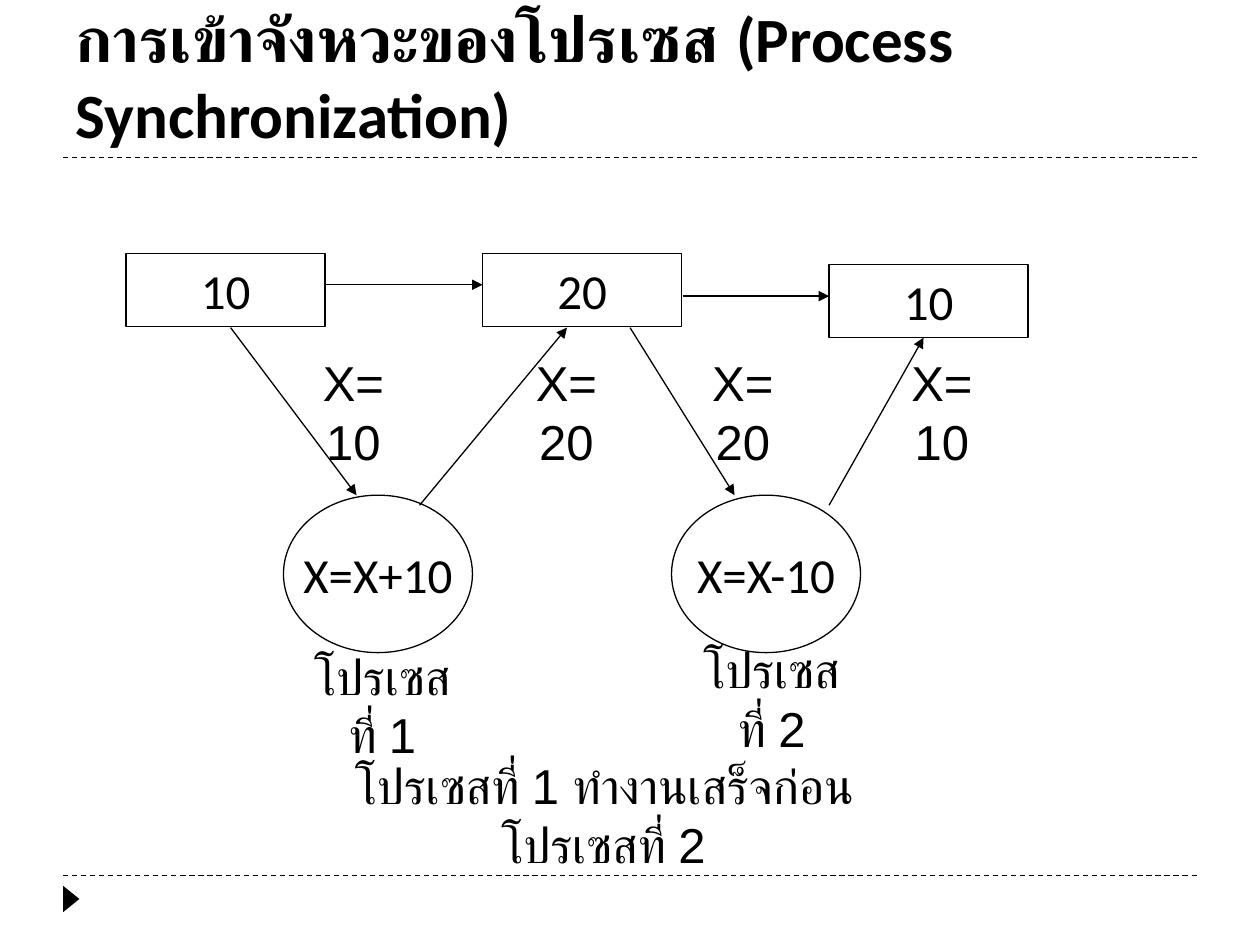
"""Build a slide on process synchronization: values in boxes, processes in circles."""
from dataclasses import dataclass

from lxml import etree
from pptx import Presentation
from pptx import util as u
from pptx.dml import color
from pptx.enum import dml, shapes, text
from pptx.oxml import ns


@dataclass(frozen=True)
class Theme:
    ink: color.RGBColor = color.RGBColor(0, 0, 0)
    main: str = "Calibri"
    note: str = "Arial"
    head: u.Pt = u.Pt(36)
    body: u.Pt = u.Pt(28)
    rule: u.Pt = u.Pt(0.75)


THEME = Theme()
CENTER = text.PP_ALIGN.CENTER


def inches(*nums):
    return [u.Inches(n) for n in nums]


def write(frame, words, face, size, align, anchor=text.MSO_ANCHOR.MIDDLE):
    frame.text = words
    frame.vertical_anchor = anchor
    para = frame.paragraphs[0]
    para.alignment = align
    para.font.name, para.font.size = face, size
    para.font.color.rgb = THEME.ink
    return para


def add_line(slide, start, end, dash=False):
    line = slide.shapes.add_connector(
        shapes.MSO_CONNECTOR.STRAIGHT, *inches(*start, *end))
    line.line.color.rgb = THEME.ink
    line.line.width = THEME.rule
    if dash:
        line.line.dash_style = dml.MSO_LINE.DASH
    else:
        etree.SubElement(line.line._get_or_add_ln(), ns.qn("a:tailEnd"), type="triangle")
    etree.SubElement(line._element.spPr, ns.qn("a:effectLst"))


def add_node(slide, kind, words, *place):
    node = slide.shapes.add_shape(kind, *inches(*place))
    node.shadow.inherit = False
    node.fill.background()
    node.line.color.rgb = THEME.ink
    node.line.width = THEME.rule
    node.text_frame.word_wrap = False
    write(node.text_frame, words, THEME.main, THEME.body, CENTER)


def add_note(slide, words, left, top, width):
    box = slide.shapes.add_textbox(*inches(left, top, width, 0.57))
    box.text_frame.word_wrap = True
    write(box.text_frame, words, THEME.note, THEME.body, CENTER)


def add_title(slide, words):
    title = slide.shapes.title
    title.left, title.top, title.width, title.height = inches(0.5, 0.17, 9, 1.08)
    para = write(title.text_frame, words, THEME.main, THEME.head,
                 text.PP_ALIGN.LEFT, text.MSO_ANCHOR.BOTTOM)
    para.font.bold = True


def add_frame(slide):
    for top in (6.95, 1.25):
        add_line(slide, (0.5, top), (9.5, top), dash=True)
    mark = slide.shapes.add_shape(
        shapes.MSO_SHAPE.ISOSCELES_TRIANGLE, *inches(0.46, 7.07, 0.21, 0.13))
    mark.rotation = 90
    mark.shadow.inherit = False
    mark.fill.solid()
    mark.fill.fore_color.rgb = THEME.ink
    mark.line.fill.background()


def main():
    deck = Presentation()
    deck.slide_width, deck.slide_height = inches(10, 7.5)
    slide = deck.slides.add_slide(deck.slide_layouts[5])
    add_frame(slide)
    add_title(slide, "การเข้าจังหวะของโปรเซส (Process Synchronization)")

    for words, left, top in (("10", 1, 2.01), ("20", 3.83, 2.01), ("10", 6.58, 2.1)):
        add_node(slide, shapes.MSO_SHAPE.RECTANGLE, words, left, top, 1.58, 0.58)
    for words, left in (("X=X+10", 2.25), ("X=X-10", 5.33)):
        add_node(slide, shapes.MSO_SHAPE.OVAL, words, left, 3.93, 1.5, 1.25)

    arrows = (
        ((2.58, 2.26), (3.83, 2.26)),
        ((5.42, 2.35), (6.58, 2.35)),
        ((1.83, 2.6), (2.83, 3.93)),
        ((3.33, 4.01), (4.5, 2.6)),
        ((5, 2.6), (5.83, 3.93)),
        ((6.58, 4.01), (7.33, 2.68)),
    )
    for start, end in arrows:
        add_line(slide, start, end)

    add_note(slide, "โปรเซสที่ 1", 2.32, 5.31, 1.43)
    add_note(slide, "โปรเซสที่ 2", 5.41, 5.26, 1.43)
    add_note(slide, "โปรเซสที่ 1 ทำงานเสร็จก่อนโปรเซสที่ 2", 2.55, 6.18, 4.48)
    for words, left in (("X=10", 2.4), ("X=20", 4.09), ("X=20", 5.49), ("X=10", 7.07)):
        add_note(slide, words, left, 2.98, 0.81)
    deck.save("out.pptx")


if __name__ == "__main__":
    main()
